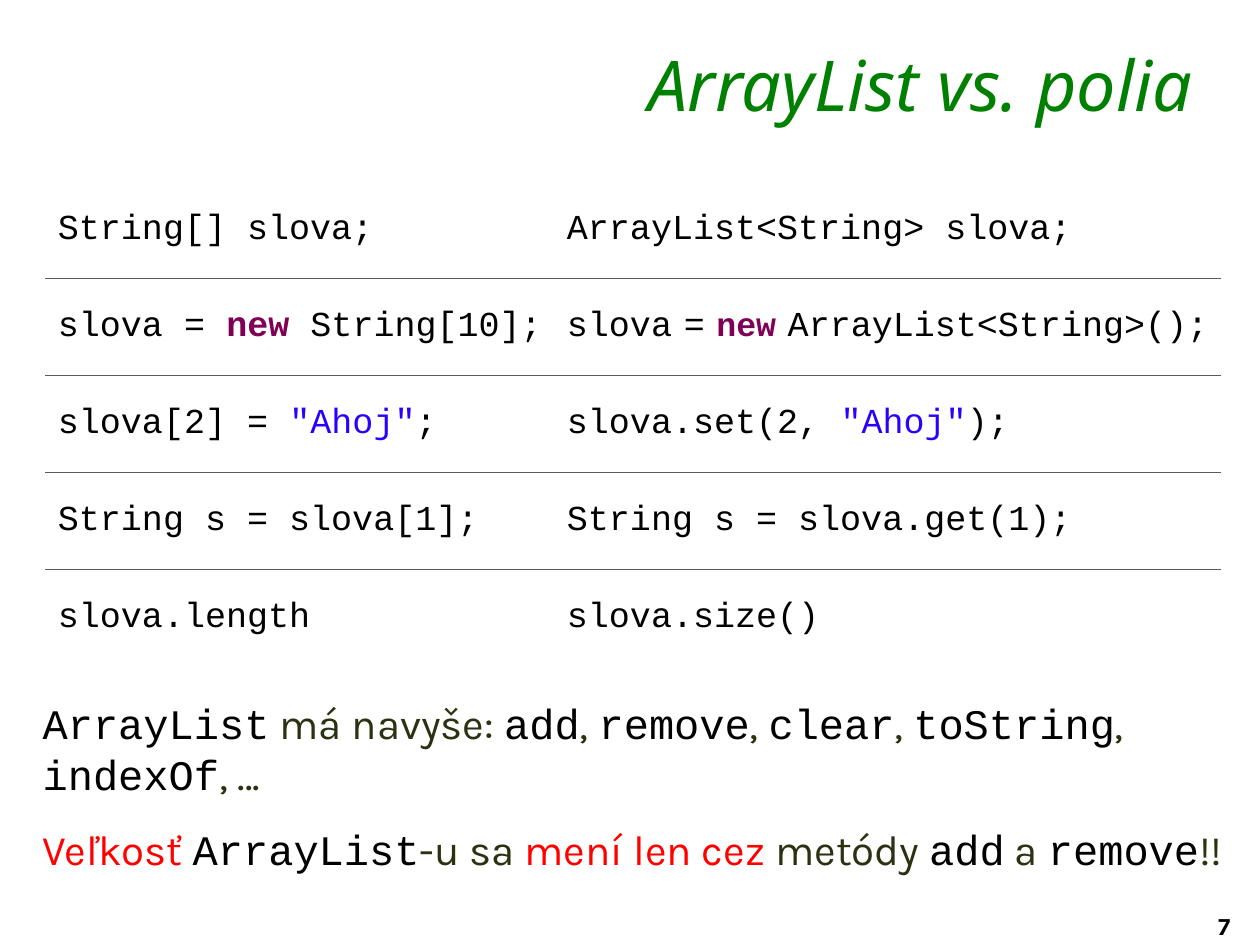
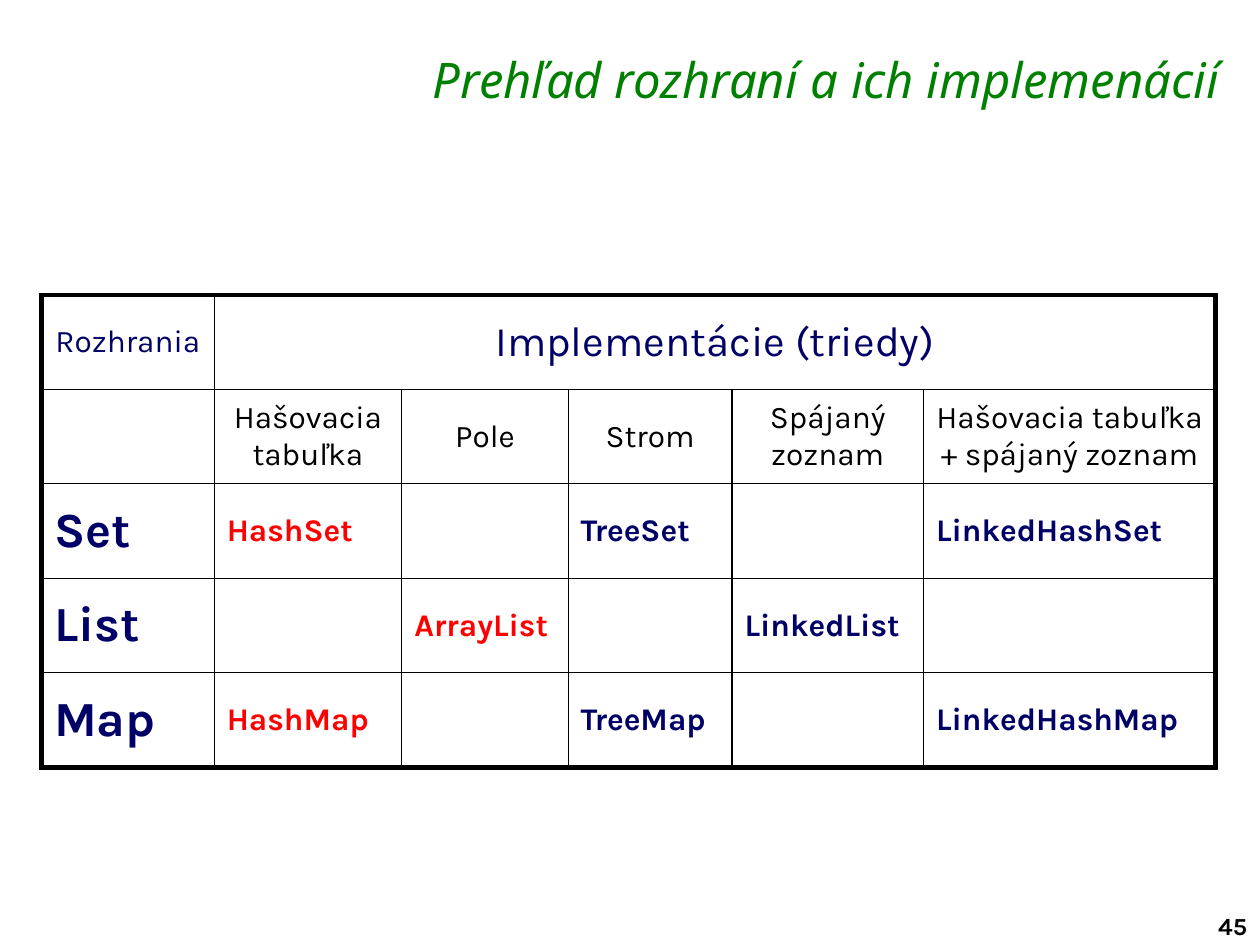
"""Builds two slides that compare Java collections with arrays and with each other."""
from collections import namedtuple

from lxml import etree
from pptx import Presentation
from pptx.dml.color import RGBColor
from pptx.enum.text import MSO_ANCHOR, MSO_AUTO_SIZE, PP_ALIGN
from pptx.oxml.ns import qn
from pptx.util import Inches, Pt

BLACK = RGBColor(0x00, 0x00, 0x00)
GREEN = RGBColor(0x00, 0x80, 0x00)
GREY = RGBColor(0x59, 0x59, 0x59)
NAVY = RGBColor(0x00, 0x00, 0x66)
OLIVE = RGBColor(0x2B, 0x32, 0x12)
RED = RGBColor(0xFF, 0x00, 0x00)
KEYWORD_PURPLE = RGBColor(0x7F, 0x00, 0x55)
STRING_BLUE = RGBColor(0x2A, 0x00, 0xFF)

CODE_FONT, TEXT_FONT, TITLE_FONT = "Courier New", "Karla", "Noto Sans"

Style = namedtuple("Style", "size font color bold italic", defaults=(False, False))
Borders = namedtuple("Borders", "color outer across down")

CODE = Style(20, CODE_FONT, BLACK)
KEYWORD = CODE._replace(color=KEYWORD_PURPLE, bold=True)
STRING = CODE._replace(color=STRING_BLUE)
THIN_GAP = CODE._replace(size=11)
NOTE = Style(24, TEXT_FONT, OLIVE)
NOTE_CODE = Style(24, CODE_FONT, BLACK)
NOTE_ALERT = NOTE._replace(color=RED)
HEADING = Style(18, TEXT_FONT, NAVY)
WIDE_HEADING = HEADING._replace(size=24)
STRUCTURE = HEADING._replace(color=BLACK)
INTERFACE = Style(28, TEXT_FONT, NAVY, True)
CLASS = HEADING._replace(bold=True)
KNOWN_CLASS = CLASS._replace(color=RED)
PAGE_NUMBER = Style(14, TEXT_FONT, BLACK, True)


class Deck:
    """Holds the presentation, its shared style and the current slide."""

    def __init__(self):
        self.presentation = Presentation()
        self.presentation.slide_width = Inches(10)
        self.presentation.slide_height = Inches(7.5)
        self.slide = None

    def set_font(self, font, style):
        font.size = Pt(style.size)
        font.name = style.font
        font.bold = style.bold
        font.italic = style.italic
        font.color.rgb = style.color

    def fill_frame(self, frame, paragraphs, align=PP_ALIGN.LEFT, gap=0):
        for index, pieces in enumerate(paragraphs):
            paragraph = frame.add_paragraph() if index else frame.paragraphs[0]
            paragraph.alignment = align
            if index and gap:
                paragraph.space_before = Pt(gap)
            if len(pieces) == 1:
                self.set_font(paragraph.font, pieces[0][1])
            for text, style in pieces:
                run = paragraph.add_run()
                run.text = text
                if len(pieces) > 1:
                    self.set_font(run.font, style)

    def text(self, left, top, width, height, paragraphs, gap=0):
        box = self.slide.shapes.add_textbox(
            Inches(left), Inches(top), Inches(width), Inches(height))
        box.text_frame.word_wrap = True
        self.fill_frame(box.text_frame, paragraphs, gap=gap)

    def new_slide(self, title, size, left, top, number):
        layout = self.presentation.slide_layouts[5]
        self.slide = self.presentation.slides.add_slide(layout)
        heading = self.slide.shapes.title
        heading.left, heading.top = Inches(left), Inches(top)
        heading.width, heading.height = Inches(7.55), Inches(0.58)
        frame = heading.text_frame
        frame.auto_size = MSO_AUTO_SIZE.NONE
        frame.vertical_anchor = MSO_ANCHOR.TOP
        frame.margin_top, frame.margin_bottom = Inches(0.02), 0
        style = Style(size, TITLE_FONT, GREEN, italic=True)
        self.fill_frame(frame, [[(title, style)]], PP_ALIGN.RIGHT)
        self.text(9.57, 7.18, 0.51, 0.33, [[(number, PAGE_NUMBER)]])

    def border(self, cell, side, width, color):
        line = etree.SubElement(cell._tc.get_or_add_tcPr(), qn(f"a:ln{side}"))
        if not width:
            etree.SubElement(line, qn("a:noFill"))
            return
        line.set("w", str(Pt(width)))
        fill = etree.SubElement(line, qn("a:solidFill"))
        etree.SubElement(fill, qn("a:srgbClr"), val=str(color))

    def table(self, left, top, columns, row_height, rows, borders, spans=(), centred_rows=0):
        last_row, last_column = len(rows) - 1, len(columns) - 1
        table = self.slide.shapes.add_table(
            len(rows), len(columns), Inches(left), Inches(top),
            Inches(sum(columns)), Inches(row_height * len(rows))).table
        table.first_row = table.horz_banding = False
        for column, width in zip(table.columns, columns):
            column.width = Inches(width)
        for row, first, last in spans:
            table.cell(row, first).merge(table.cell(row, last))
        for r, row in enumerate(rows):
            for c, paragraphs in enumerate(row):
                cell = table.cell(r, c)
                end = c + cell.span_width - 1 if cell.is_merge_origin else c
                down = 0 if cell.is_spanned else borders.down
                widths = {
                    "L": borders.outer if c == 0 else down,
                    "R": borders.outer if end == last_column else down,
                    "T": borders.outer if r == 0 else borders.across,
                    "B": borders.outer if r == last_row else borders.across,
                }
                for side, width in widths.items():
                    self.border(cell, side, width, borders.color)
                cell.fill.background()
                cell.vertical_anchor = MSO_ANCHOR.MIDDLE
                centred = r < centred_rows
                cell.margin_left = Inches(0.05 if centred else 0.1)
                cell.margin_right = Inches(0.05)
                align = PP_ALIGN.CENTER if centred else PP_ALIGN.LEFT
                self.fill_frame(cell.text_frame, paragraphs, align)


def line(text, style):
    return [[(text, style)]]


def lines(style, *texts):
    return [[(text, style)] for text in texts]


def add_array_comparison(deck):
    deck.new_slide("ArrayList vs. polia", 40, 2.01, 0.31, "7")
    greeting = ('"Ahoj"', STRING)
    operations = [
        [line("String[] slova;", CODE), line("ArrayList<String> slova;", CODE)],
        [[[("slova = ", CODE), ("new ", KEYWORD), ("String[10];", CODE)]],
         [[("slova", CODE), (" ", THIN_GAP), ("=", CODE), (" ", THIN_GAP),
           ("new", KEYWORD._replace(size=19)), (" ", THIN_GAP),
           ("ArrayList<String>();", CODE)]]],
        [[[("slova[2] = ", CODE), greeting, (";", CODE)]],
         [[("slova.set(2, ", CODE), greeting, (");", CODE)]]],
        [line("String s = slova[1];", CODE), line("String s = slova.get(1);", CODE)],
        [line("slova.length", CODE), line("slova.size()", CODE)],
    ]
    deck.table(0.36, 1.44, [4.04, 5.29], 0.77, operations, Borders(GREY, 0, 0.25, 0))

    extras = [("ArrayList", NOTE_CODE), (" má navyše: ", NOTE)]
    for method in ("add", "remove", "clear", "toString", "indexOf"):
        extras += [(method, NOTE_CODE), (", ", NOTE)]
    extras[-1] = (", ...", NOTE)
    resizing = [
        ("Veľkosť ", NOTE_ALERT), ("ArrayList", NOTE_CODE), ("-u sa ", NOTE),
        ("mení len cez ", NOTE_ALERT), ("metódy ", NOTE), ("add", NOTE_CODE),
        (" a ", NOTE), ("remove", NOTE_CODE), ("!!", NOTE),
    ]
    deck.text(0.24, 5.49, 10, 1.51, [extras, resizing], gap=14)


def add_interface_overview(deck):
    deck.new_slide("Prehľad rozhraní a ich implemenácií", 28, 2.22, 0.37, "45")
    empty = []
    overview = [
        [line("Rozhrania", HEADING), line("Implementácie (triedy)", WIDE_HEADING)]
        + [empty] * 4,
        [empty, lines(STRUCTURE, "Hašovacia", "tabuľka"), line("Pole", STRUCTURE),
         line("Strom", STRUCTURE), lines(STRUCTURE, "Spájaný", "zoznam"),
         lines(STRUCTURE, "Hašovacia tabuľka", "+ spájaný zoznam")],
    ]
    for interface in ("Set", "List", "Map"):
        if interface == "List":
            classes = [empty, line("ArrayList", KNOWN_CLASS), empty,
                       line("LinkedList", CLASS), empty]
        else:
            classes = [line(f"Hash{interface}", KNOWN_CLASS), empty,
                       line(f"Tree{interface}", CLASS), empty,
                       line(f"LinkedHash{interface}", CLASS)]
        overview.append([line(interface, INTERFACE)] + classes)
    deck.table(0.33, 2.34, [1.37, 1.49, 1.32, 1.3, 1.52, 2.32], 0.75, overview,
               Borders(BLACK, 3, 0.75, 0.75), spans=[(0, 1, 5)], centred_rows=2)


def main():
    deck = Deck()
    add_array_comparison(deck)
    add_interface_overview(deck)
    deck.presentation.save("out.pptx")


if __name__ == "__main__":
    main()
